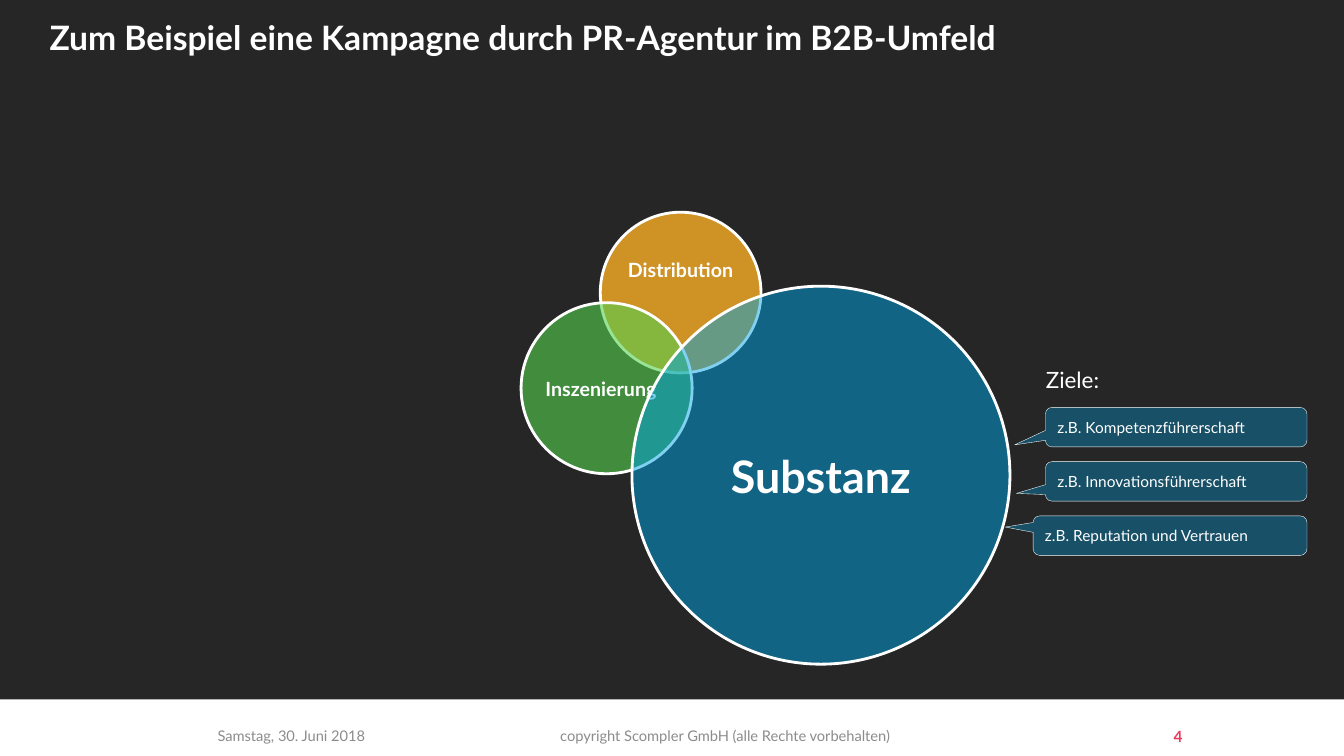
"""Build a slide with three overlapping circles and a list of campaign goals."""
from lxml import etree
from pptx import Presentation
from pptx.dml.color import RGBColor
from pptx.enum.shapes import MSO_SHAPE
from pptx.enum.text import MSO_ANCHOR, PP_ALIGN
from pptx.oxml.ns import qn
from pptx.util import Pt

WHITE = RGBColor(0xFF, 0xFF, 0xFF)
DARK = RGBColor(0x26, 0x26, 0x26)
GREY = RGBColor(0x8C, 0x8C, 0x8C)
RED = RGBColor(0xED, 0x38, 0x5D)
ORANGE = RGBColor(0xF9, 0xAD, 0x25)
GREEN = RGBColor(0x55, 0xD1, 0x4F)
BLUE = RGBColor(0x00, 0xA3, 0xE5)
PETROL = RGBColor(0x11, 0x62, 0x83)

FONT = "Lato"
WIDTH, HEIGHT = 960, 540
PANEL_HEIGHT = 499.7
INSET = 7.2

TITLE = "Zum Beispiel eine Kampagne durch PR-Agentur im B2B-Umfeld"
TITLE_HEIGHT, TITLE_INSET = 53.3, 35.4

FOOTER_TOP, FOOTER_HEIGHT = 515.5, 20.2
FOOTERS = [
    ("copyright Scompler GmbH (alle Rechte vorbehalten)", 355.7, 324.7, 10.5, GREY, False, PP_ALIGN.CENTER),
    ("4", 797.8, 54, 11, RED, True, PP_ALIGN.RIGHT),
    ("Samstag, 30. Juni 2018", 148.3, 206.6, 10.5, GREY, False, PP_ALIGN.LEFT),
]

# label, left, top, diameter, colour, opacity, size, right inset, bottom inset
CIRCLES = [
    ("Distribution", 428.8, 151.6, 114.8, ORANGE, 80, 14, 0, 32),
    ("Inszenierung", 372.2, 216.2, 122.2, GREEN, 60, 14, 8, 0),
    ("Substanz", 451.4, 204.4, 270, BLUE, 50, 32, 0, 0),
]

GOALS_HEADING = "Ziele:"
GOALS = [
    ("z.B. Kompetenzführerschaft", 746.8, (-0.618, 0.449)),
    ("z.B. Innovationsführerschaft", 746.8, (-0.611, 0.305)),
    ("z.B. Reputation und Vertrauen", 738, (-0.602, -0.217)),
]
GOAL_TOP, GOAL_PITCH, GOAL_HEIGHT, GOAL_RIGHT = 291, 38.75, 28.2, 933.6


def write(shape, text, size, colour=WHITE, bold=False, align=PP_ALIGN.LEFT,
          margins=(INSET, 3.6, INSET, 3.6), wrap=True):
    """Put one line of text into a shape, centred vertically."""
    frame = shape.text_frame
    frame.word_wrap = wrap
    frame.vertical_anchor = MSO_ANCHOR.MIDDLE
    (frame.margin_left, frame.margin_top,
     frame.margin_right, frame.margin_bottom) = map(Pt, margins)
    paragraph = frame.paragraphs[0]
    paragraph.text = text
    paragraph.alignment = align
    font = paragraph.font
    font.name, font.size, font.bold = FONT, Pt(size), bold
    font.color.rgb = colour


def add_text(slide, box, text, size, **style):
    """Add a text box with one line."""
    write(slide.shapes.add_textbox(*map(Pt, box)), text, size, **style)


def add_filled(slide, kind, box, colour, opacity=100, line_width=0):
    """Add a filled shape, with a white outline if a line width is given."""
    shape = slide.shapes.add_shape(kind, *map(Pt, box))
    shape.shadow.inherit = False
    shape.fill.solid()
    shape.fill.fore_color.rgb = colour
    if opacity < 100:
        colour_element = shape.fill._xPr.find(qn("a:solidFill"))[0]
        etree.SubElement(colour_element, qn("a:alpha"), val=str(opacity * 1000))
    if line_width:
        shape.line.color.rgb = WHITE
        shape.line.width = Pt(line_width)
    else:
        shape.line.fill.background()
    return shape


def main():
    """Create and save the presentation."""
    presentation = Presentation()
    presentation.slide_width, presentation.slide_height = Pt(WIDTH), Pt(HEIGHT)
    slide = presentation.slides.add_slide(presentation.slide_layouts[6])

    add_filled(slide, MSO_SHAPE.RECTANGLE, (0, 0, WIDTH, PANEL_HEIGHT), DARK)
    add_text(slide, (0, 0, WIDTH, TITLE_HEIGHT), TITLE, 24, bold=True,
             margins=(TITLE_INSET, 3.6, INSET, 3.6))
    for text, left, width, size, colour, bold, align in FOOTERS:
        add_text(slide, (left, FOOTER_TOP, width, FOOTER_HEIGHT), text, size,
                 colour=colour, bold=bold, align=align)

    for label, left, top, diameter, colour, opacity, size, right, bottom in CIRCLES:
        circle = add_filled(slide, MSO_SHAPE.OVAL, (left, top, diameter, diameter),
                            colour, opacity, 2)
        write(circle, label, size, bold=True, align=PP_ALIGN.CENTER,
              margins=(0, 0, right, bottom), wrap=False)

    for index, (text, left, tip) in enumerate(GOALS):
        box = (left, GOAL_TOP + index * GOAL_PITCH, GOAL_RIGHT - left, GOAL_HEIGHT)
        callout = add_filled(slide, MSO_SHAPE.ROUNDED_RECTANGULAR_CALLOUT, box, PETROL, 70, 0.25)
        callout.adjustments[0], callout.adjustments[1] = tip
        write(callout, text, 11)
    add_text(slide, (740, 258, 54, 26.6), GOALS_HEADING, 16, wrap=False)

    presentation.save("out.pptx")


if __name__ == "__main__":
    main()
